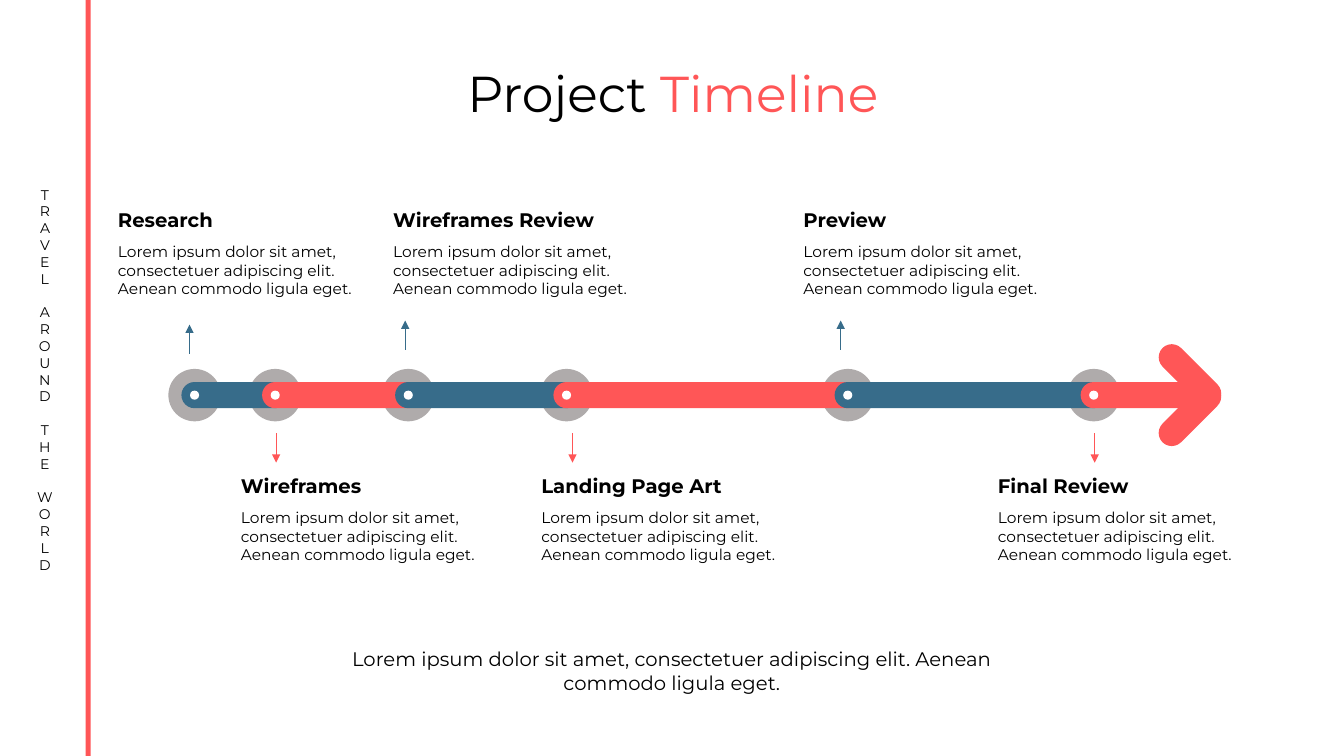
from lxml.etree import SubElement
from pptx import Presentation
from pptx.dml.color import RGBColor
from pptx.enum.shapes import MSO_CONNECTOR, MSO_SHAPE
from pptx.enum.text import MSO_ANCHOR, MSO_AUTO_SIZE, PP_ALIGN
from pptx.oxml.ns import qn
from pptx.util import Inches, Pt

FONT = "Montserrat"
CORAL, BLUE, GREY, BLACK, WHITE = "FF5657", "376C8A", "AFABAB", "000000", "FFFFFF"
LOREM = ("Lorem ipsum dolor sit amet, consectetuer adipiscing elit. "
         "Aenean commodo ligula eget.")
WIDE, HIGH = 133.33, 75
AXIS = 39.2
BAR, HALO, DOT = 2.6, 5.2, 0.9
END = 121.1

# heading, stop centre, text left, arrow x, arrow tail y
STAGES = [
    ("Research", 19.3, 9.7, 18.8, 35.1),
    ("Wireframes", 27.3, 21.9, 27.4, 43),
    ("Wireframes Review", 40.5, 37, 40.2, 34.7),
    ("Landing Page Art", 56.2, 51.7, 56.8, 43),
    ("Preview", 84.1, 77.7, 83.4, 34.7),
    ("Final Review", 108.5, 97, 108.6, 43),
]


def grid(*cells):
    """Turn counts of tenth-inch grid cells into lengths."""
    return [Inches(cell / 10) for cell in cells]


def paint(color, code):
    color.rgb = RGBColor.from_string(code)


def style(run, size, code=BLACK, bold=False):
    run.font.name, run.font.size, run.font.bold = FONT, Pt(size), bold
    paint(run.font.color, code)


def label(slide, box, text, size, bold=False, align=PP_ALIGN.LEFT):
    frame = slide.shapes.add_textbox(*grid(*box)).text_frame
    frame.word_wrap = True
    frame.text = text
    line = frame.paragraphs[0]
    line.alignment = align
    style(line.runs[0], size, bold=bold)
    return frame


def block(slide, box, text, size, bold=False):
    """Add a stage text with wide insets, centred in height."""
    frame = label(slide, box, text, size, bold)
    frame.vertical_anchor = MSO_ANCHOR.MIDDLE
    frame.margin_left, frame.margin_right = grid(2, 2)
    frame.margin_top, frame.margin_bottom = grid(1, 1)


def solid(slide, kind, box, code):
    shape = slide.shapes.add_shape(kind, *grid(*box))
    shape.shadow.inherit = False
    shape.fill.solid()
    paint(shape.fill.fore_color, code)
    shape.line.fill.background()
    return shape


def disc(slide, mid, size, code):
    box = (mid - size / 2, AXIS - size / 2, size, size)
    solid(slide, MSO_SHAPE.OVAL, box, code)


def pill(slide, left, mid, width, code, turn=0):
    box = (left, mid - BAR / 2, width, BAR)
    shape = solid(slide, MSO_SHAPE.ROUNDED_RECTANGLE, box, code)
    shape.adjustments[0] = 0.5
    shape.rotation = turn


def arrow(slide, x, start, end, code):
    line = slide.shapes.add_connector(
        MSO_CONNECTOR.STRAIGHT, *grid(x, start, x, end))
    line.line.width = Pt(0.5)
    paint(line.line.color, code)
    SubElement(line.line._get_or_add_ln(), qn("a:tailEnd"), type="triangle")
    SubElement(line._element.spPr, qn("a:effectLst"))


def title(slide):
    shape = slide.shapes.title
    shape.left, shape.top, shape.width, shape.height = grid(42.4, 5.7, 48.7, 6.9)
    frame = shape.text_frame
    frame.auto_size = MSO_AUTO_SIZE.NONE
    frame.vertical_anchor = MSO_ANCHOR.TOP
    line = frame.paragraphs[0]
    line.alignment = PP_ALIGN.CENTER
    for text, code in (("Project ", BLACK), ("Timeline", CORAL)):
        run = line.add_run()
        run.text = text
        style(run, 36, code)


def side(slide):
    """Add the stacked motto and the rule beside it."""
    frame = label(slide, (2.3, 11.2, 4.3, 52.9), "TRAVEL AROUND THE WORLD",
                  10, align=PP_ALIGN.CENTER)
    frame.word_wrap = False
    frame.auto_size = MSO_AUTO_SIZE.SHAPE_TO_FIT_TEXT
    frame._txBody.bodyPr.set("vert", "wordArtVert")
    solid(slide, MSO_SHAPE.RECTANGLE, (8.5, 0, 0.5, HIGH), CORAL)


def track(slide):
    stops = [stage[1] for stage in STAGES]
    ends = [stop + BAR / 2 for stop in stops[1:]] + [END]
    for stop in stops:
        disc(slide, stop, HALO, GREY)
    for i, (stop, end) in enumerate(zip(stops, ends)):
        left = stop - BAR / 2
        pill(slide, left, AXIS, end - left, (BLUE, CORAL)[i % 2])
        disc(slide, stop, DOT, WHITE)
    for side_of, turn in ((1, 315), (-1, 45)):
        pill(slide, 114.2, AXIS + side_of * 1.95, 7.7, CORAL, turn)


def stages(slide):
    for i, (name, _, left, x, tail) in enumerate(STAGES):
        below = i % 2
        top = 46.3 if below else 19.9
        block(slide, (left, top, 28.2, 3.8), name, 14, bold=True)
        block(slide, (left, top + 3.9, 28.2, 6), LOREM, 11)
        reach = 2.9 if below else -2.9
        arrow(slide, x, tail, tail + reach, CORAL if below else BLUE)


def main():
    deck = Presentation()
    deck.slide_width, deck.slide_height = grid(WIDE, HIGH)
    slide = deck.slides.add_slide(deck.slide_layouts[5])
    title(slide)
    side(slide)
    track(slide)
    stages(slide)
    note = label(slide, (WIDE / 4, 63.7, WIDE / 2, 5.7), LOREM, 14,
                 align=PP_ALIGN.CENTER)
    note.auto_size = MSO_AUTO_SIZE.SHAPE_TO_FIT_TEXT
    deck.save("out.pptx")


if __name__ == "__main__":
    main()
